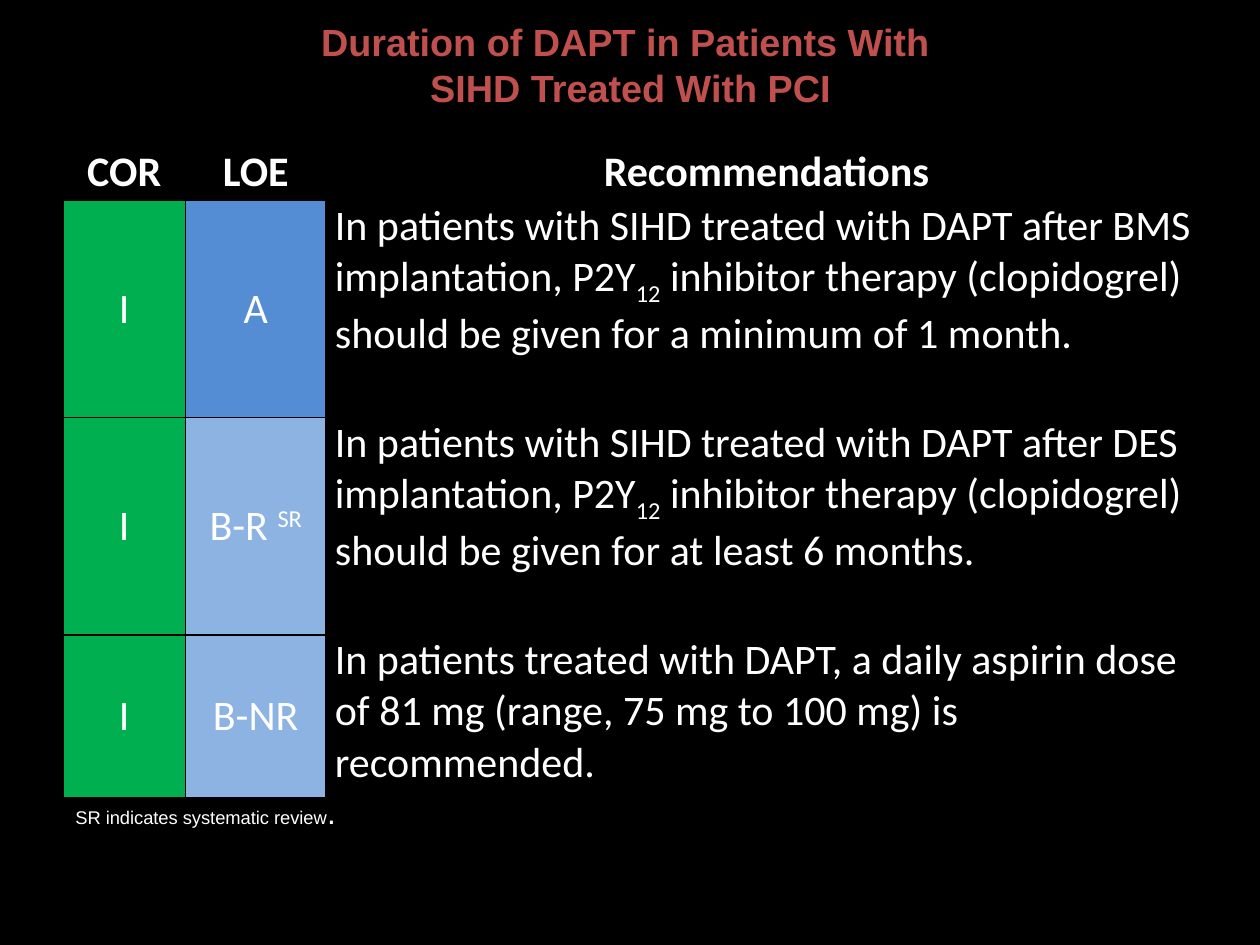
import dataclasses

import lxml.etree
import pptx
import pptx.dml.color
import pptx.enum.text
import pptx.oxml.ns
import pptx.util

PP_ALIGN = pptx.enum.text.PP_ALIGN
ANCHOR = pptx.enum.text.MSO_ANCHOR
Inches = pptx.util.Inches
Pt = pptx.util.Pt
WIDTH, HEIGHT = Inches(10), Inches(7.5)


@dataclasses.dataclass(frozen=True)
class Theme:
    background: str = "000000"
    text: str = "FFFFFF"
    title: str = "C0504D"
    class_one: str = "00B050"
    level_a: str = "548DD4"
    level_b: str = "8DB3E2"
    heading_font: str = "Arial"
    table_font: str = "Calibri"
    title_size: float = 21.6
    table_size: float = 24
    note_size: float = 10.5
    note_stop_size: float = 18


THEME = Theme()
SUBSCRIPT, SUPERSCRIPT = -25000, 30000

HEADINGS = ("COR", "LOE", "Recommendations")


def stent_advice(stent, duration):
    return [
        (f"In patients with SIHD treated with DAPT after {stent} implantation, P2Y", 0),
        ("12", SUBSCRIPT),
        (f" inhibitor therapy (clopidogrel) should be given for {duration}.", 0),
    ]


# Level of evidence, its colour, recommendation; text is (words, baseline shift)
RECOMMENDATIONS = [
    ([("A", 0)], THEME.level_a, stent_advice("BMS", "a minimum of 1 month")),
    ([("B-R ", 0), ("SR", SUPERSCRIPT)], THEME.level_b,
     stent_advice("DES", "at least 6 months")),
    ([("B-NR", 0)], THEME.level_b,
     [("In patients treated with DAPT, a daily aspirin dose of 81 mg "
       "(range, 75 mg to 100 mg) is recommended.", 0)]),
]


def rgb(value):
    return pptx.dml.color.RGBColor.from_string(value)


def share_box(left, top, width, height):
    """Turn shares of the slide into lengths."""
    return (int(left * WIDTH), int(top * HEIGHT),
            int(width * WIDTH), int(height * HEIGHT))


def style_font(font, name, size, color, bold=False):
    font.name, font.size, font.bold = name, Pt(size), bold
    font.color.rgb = rgb(color)


def add_borders(cell, color, points=1):
    properties = cell._tc.get_or_add_tcPr()
    for side in ("lnL", "lnR", "lnT", "lnB"):
        line = lxml.etree.SubElement(
            properties, pptx.oxml.ns.qn(f"a:{side}"), w=str(Pt(points)))
        fill = lxml.etree.SubElement(line, pptx.oxml.ns.qn("a:solidFill"))
        lxml.etree.SubElement(fill, pptx.oxml.ns.qn("a:srgbClr"), val=color)


def fill_cell(cell, spans, fill=None, bold=False, align=PP_ALIGN.CENTER,
              anchor=ANCHOR.TOP):
    cell.margin_left = cell.margin_right = Inches(0.07)
    cell.margin_top = cell.margin_bottom = 0
    cell.vertical_anchor = anchor
    add_borders(cell, THEME.background)
    if fill:
        cell.fill.solid()
        cell.fill.fore_color.rgb = rgb(fill)
    else:
        cell.fill.background()
    para = cell.text_frame.paragraphs[0]
    para.alignment = align
    for words, shift in spans:
        span = para.add_run()
        span.text = words
        style_font(span.font, THEME.table_font, THEME.table_size, THEME.text, bold)
        if shift:
            span.font._element.set("baseline", str(shift))


def place_title(page, box):
    title = page.shapes.title
    title.left, title.top, title.width, title.height = box
    frame = title.text_frame
    frame.word_wrap = True
    frame.vertical_anchor = ANCHOR.MIDDLE
    frame.text = "Duration of DAPT in Patients With \vSIHD Treated With PCI"
    para = frame.paragraphs[0]
    para.alignment = PP_ALIGN.CENTER
    style_font(para.font, THEME.heading_font, THEME.title_size, THEME.title, True)


def place_table(page, box):
    table = page.shapes.add_table(
        len(RECOMMENDATIONS) + 1, len(HEADINGS), *box).table
    table.first_row = table.horz_banding = False
    for column, share in zip(table.columns, (0.107, 0.123, 0.77)):
        column.width = int(box[2] * share)
    # Row heights in twelfths of the box
    for row, parts in zip(table.rows, (1, 4, 4, 3)):
        row.height = box[3] * parts // 12

    for column, heading in enumerate(HEADINGS):
        fill_cell(table.cell(0, column), [(heading, 0)], bold=True)
    for row, (level, color, advice) in enumerate(RECOMMENDATIONS, start=1):
        fill_cell(table.cell(row, 0), [("I", 0)], THEME.class_one,
                  anchor=ANCHOR.MIDDLE)
        fill_cell(table.cell(row, 1), level, color, anchor=ANCHOR.MIDDLE)
        fill_cell(table.cell(row, 2), advice, align=PP_ALIGN.LEFT)


def place_note(page, box):
    frame = page.shapes.add_textbox(*box).text_frame
    frame.word_wrap = False
    frame.auto_size = pptx.enum.text.MSO_AUTO_SIZE.SHAPE_TO_FIT_TEXT
    para = frame.paragraphs[0]
    for words, size in (("SR indicates systematic review", THEME.note_size),
                        (".", THEME.note_stop_size)):
        span = para.add_run()
        span.text = words
        style_font(span.font, THEME.heading_font, size, THEME.text)


def main():
    deck = pptx.Presentation()
    deck.slide_width, deck.slide_height = WIDTH, HEIGHT
    page = deck.slides.add_slide(deck.slide_layouts.get_by_name("Title Only"))
    page.background.fill.solid()
    page.background.fill.fore_color.rgb = rgb(THEME.background)

    place_title(page, share_box(0.042, 0.023, 0.917, 0.09))
    place_table(page, share_box(0.05, 0.155, 0.908, 0.689))
    place_note(page, share_box(0.05, 0.833, 0.231, 0.053))
    deck.save("out.pptx")


if __name__ == "__main__":
    main()
